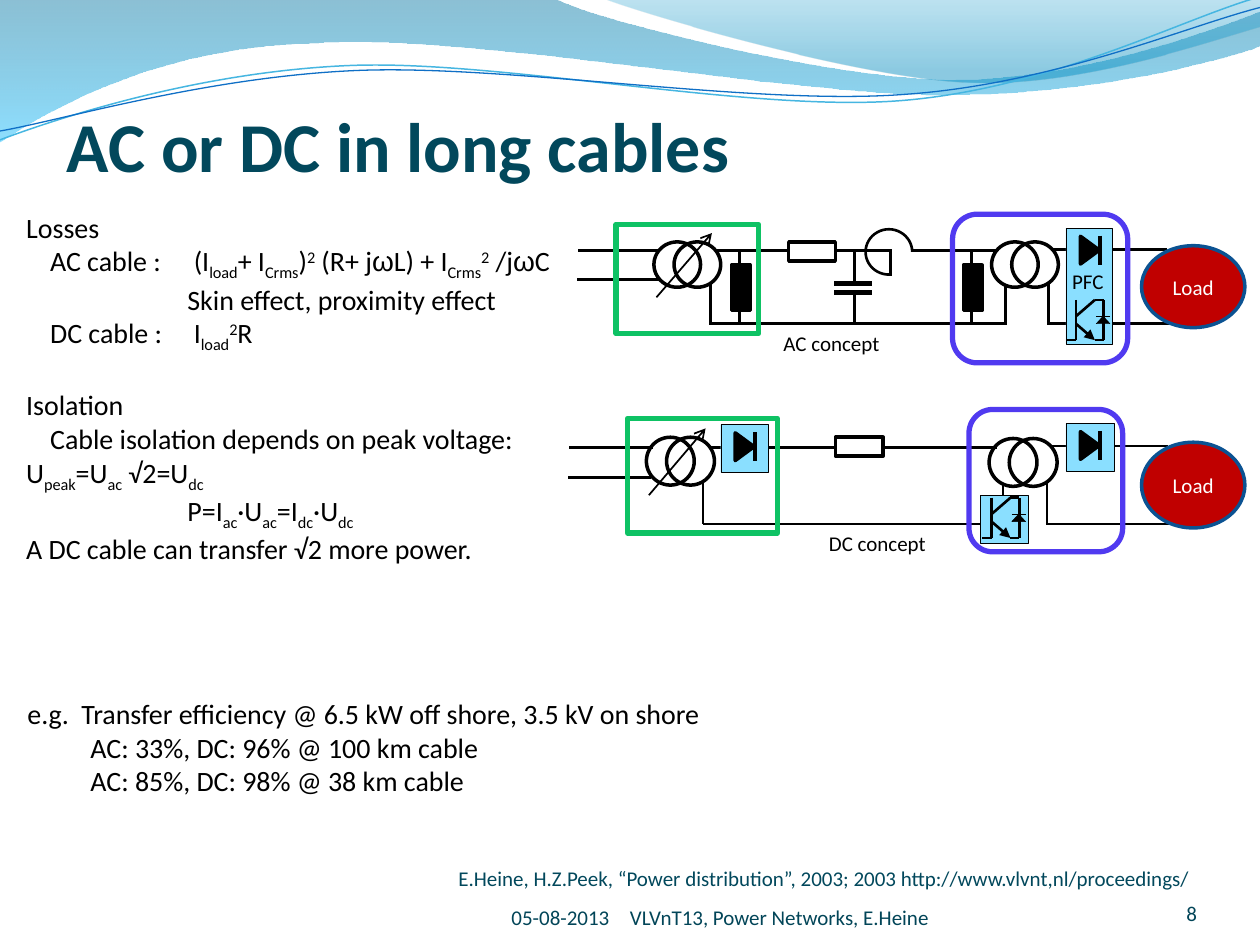
"""Build the slide comparing AC and DC power transfer in long cables."""
import math
from dataclasses import dataclass

from lxml import etree
from pptx import Presentation
from pptx import util as u
from pptx.dml.color import RGBColor
from pptx.enum import shapes, text
from pptx.oxml.ns import qn


@dataclass(frozen=True)
class Theme:
    font: str = "Calibri"
    greek: str = "Arial"
    ink: str = "000000"
    title: str = "02485C"
    footer: str = "024558"
    white: str = "FFFFFF"
    converter: str = "8ADFFF"
    shore: str = "0EC264"
    sea: str = "503AF0"
    load: str = "C00000"
    load_edge: str = "0B5292"
    title_size: int = 40
    body_size: int = 16
    small_size: int = 12


THEME = Theme()
KIND = shapes.MSO_SHAPE
BASELINES = {"_": -25000, "^": 30000}

LOSSES = [
    "Losses",
    "\tAC cable :\t (I|_load|+ I|_Crms|)|^2| (R+ j|ω|L) + I|_Crms|^2| /j|ω|C",
    "\t\tSkin effect, proximity effect",
    "\tDC cable :\t I|_load|^2|R",
]
ISOLATION = [
    "Isolation",
    "\tCable isolation depends on peak voltage: \t\t\tU|_peak|=U|_ac| √2=U|_dc",
    "\t\tP=I|_ac|·U|_ac|=I|_dc|·U|_dc",
    "A DC cable can transfer √2 more power.",
]
EFFICIENCY = [
    "e.g.  Transfer efficiency @ 6.5 kW off shore, 3.5 kV on shore",
    "AC: 33%, DC: 96% @ 100 km cable",
    "AC: 85%, DC: 98% @ 38 km cable",
]
CITATION = "E.Heine, H.Z.Peek, “Power distribution”, 2003; 2003 http://www.vlvnt,nl/proceedings/"
FOOTERS = [
    ((4.06, 6.98, 2.33, 0.4), "05-08-2013", "LEFT"),
    ((5, 6.98, 3.46, 0.4), "VLVnT13, Power Networks, E.Heine", "LEFT"),
    ((8.67, 6.95, 0.83, 0.4), "8", "RIGHT"),
]

BANDS = [
    ([(0, 0), (4.4, -0.01), (4.76, 0.17, 6.64, 0.63, 7.58, 0.63), (8.53, 0.63, 9.58, 0.26, 10, 0.09),
      (10.01, 0.36), (9.83, 0.44, 8.7, 0.76, 7.46, 0.75), (6.22, 0.75, 3.82, 0.28, 2.57, 0.34),
      (1.29, 0.36, 0.46, 0.83, -0.01, 1.13), (0, 0)],
     [(0, "0074A1", 45), (1, "30C5FF", 55)]),
    ([(4.79, -0.01), (5.09, 0.11, 6.82, 0.62, 7.69, 0.65), (8.56, 0.69, 9.61, 0.32, 10, 0.21),
      (10, 0), (4.79, -0.01)],
     [(0, "27A1D0", 30), (0.8, "008BBF", 45)]),
]
RIPPLE_TILT = -2.7
RIPPLES = [
    ([(0, 1.11), (0.48, 0.93, 1.58, 0.57, 2.77, 0.52), (3.95, 0.47, 5.93, 0.89, 7.13, 0.8),
      (8.33, 0.71, 9.38, 0.15, 9.98, -0.02)], (4.99, 0.58), "46B6E1", 0.85),
    ([(0, 1.04), (0.47, 0.96, 1.64, 0.61, 2.83, 0.56), (4.03, 0.51, 5.97, 0.84, 7.17, 0.75),
      (8.36, 0.67, 9.41, 0.21, 10, 0.06)], (5, 0.59), "0F6FC6", 0.75),
]

CIRCUITS = [
    dict(
        wires=[(7.98, 2.27, 7.98, 2.58), (8.32, 2.25, 8.32, 2.58), (7.91, 1.99, 7.24, 1.99),
               (8.31, 2.57, 9.28, 2.57), (5.64, 2.57, 7.97, 2.57), (5.68, 1.99, 7.08, 1.99),
               (6.78, 1.99, 6.78, 2.57), (5.64, 2.25, 5.64, 2.58), (5.24, 1.99, 4.59, 1.99),
               (5.23, 2.22, 4.58, 2.22), (7.07, 1.99, 7.07, 2.19), (9.26, 1.98, 8.34, 1.98),
               (7.71, 1.99, 7.71, 2.57), (5.87, 1.99, 5.87, 2.57)],
        transformers=[(5.19, 1.92), (7.87, 1.92)], coil=(0.37, 0.36), tap=(5.21, 2.36, 5.65, 1.85),
        shore=(4.89, 1.78, 1.13, 0.87), sea=(7.56, 1.7, 1.39, 1.18), load=(9.06, 1.95, 0.82, 0.65),
        resistor=(6.26, 1.92, 0.37, 0.15), shunts=[(5.7, 2.21), (7.54, 2.21)],
        capacitors=[(6.62, 2.25)], inductors=[(6.87, 1.82, 0.37, 0.36)],
        converters=[(8.46, 1.81, 0.37, 0.92)], diodes=[(8.46, 1.81)], transistor=(8.45, 2.36),
        labels=[((6.12, 2.57, 1, 0.31), "AC concept"), ((8.41, 2.08, 0.45, 0.3), "PFC")]),
    dict(
        wires=[(7.96, 3.84, 7.96, 4.18), (8.31, 3.82, 8.31, 4.16), (9.27, 3.54, 8.33, 3.54),
               (8.3, 4.16, 9.29, 4.16), (5.58, 4.16, 7.78, 4.16), (5.63, 3.55, 7.91, 3.55),
               (5.58, 3.82, 5.58, 4.16), (5.18, 3.55, 4.52, 3.55), (5.17, 3.79, 4.51, 3.79)],
        transformers=[(5.13, 3.47), (7.85, 3.48)], coil=(0.38, 0.38), tap=(5.15, 3.93, 5.6, 3.4),
        shore=(4.98, 3.32, 1.19, 0.91), sea=(7.69, 3.25, 1.22, 1.13), load=(9.06, 3.51, 0.82, 0.68),
        resistor=(6.63, 3.47, 0.38, 0.15), shunts=[], capacitors=[], inductors=[],
        converters=[(x, y, 0.38, 0.38) for x, y in [(7.78, 3.93), (8.46, 3.36), (5.72, 3.37)]],
        diodes=[(8.46, 3.36), (5.72, 3.37)], transistor=(7.78, 3.93),
        labels=[((6.48, 4.16, 0.98, 0.3), "DC concept")]),
]
TRANSISTOR_WIRES = [(0.09, 0.02, 0.09, 0.34), (0.09, 0.34, 0.01, 0.34), (0.09, 0.15, 0.24, 0.02),
                    (0.24, 0.02, 0.31, 0.02), (0.24, 0.34, 0.31, 0.34), (0.31, 0.02, 0.31, 0.34)]


def inches(values):
    return [u.Inches(value) for value in values]


def paint(shape, fill=None, line=None, weight=2):
    shape.shadow.inherit = False
    for target, color in ((shape.fill, fill), (shape.line.fill, line)):
        if color:
            target.solid()
            target.fore_color.rgb = RGBColor.from_string(color)
        else:
            target.background()
    if line:
        shape.line.width = u.Pt(weight)
    return shape


def add_part(page, kind, place, fill=None, line=THEME.ink, weight=2, turn=0):
    shape = paint(page.shapes.add_shape(kind, *inches(place)), fill, line, weight)
    shape.rotation = turn
    return shape


def add_wire(page, ends, weight=1.5, head=None):
    wire = page.shapes.add_connector(shapes.MSO_CONNECTOR.STRAIGHT, *inches(ends))
    wire.line.color.rgb = RGBColor.from_string(THEME.ink)
    wire.line.width = u.Pt(weight)
    if head:
        etree.SubElement(wire.line._get_or_add_ln(), qn("a:tailEnd"), type=head)
    etree.SubElement(wire.element.spPr, qn("a:effectLst"))


def add_spans(para, line, size, color, bold=False):
    for piece in line.split("|"):
        span = para.add_run()
        span.text = piece.lstrip("_^")
        span.font.size = u.Pt(size)
        span.font.bold = bold
        span.font.name = THEME.greek if piece == "ω" else THEME.font
        span.font.color.rgb = RGBColor.from_string(color)
        if piece[0] in BASELINES:
            span.font._element.set("baseline", str(BASELINES[piece[0]]))


def add_text(page, place, lines, size, color=THEME.ink, wrap=False, bold=False, insets=None, align="LEFT"):
    box = page.shapes.add_textbox(*inches(place))
    frame = box.text_frame
    frame.word_wrap = wrap
    if insets:
        frame.margin_left, frame.margin_top, frame.margin_right, frame.margin_bottom = inches(insets)
        frame.vertical_anchor = text.MSO_ANCHOR.BOTTOM
    for index, line in enumerate(lines):
        para = frame.paragraphs[0] if index == 0 else frame.add_paragraph()
        para.alignment = text.PP_ALIGN[align]
        add_spans(para, line, size, color, bold)
    return frame.paragraphs


def add_curve(page, steps, center=(0, 0), tilt=0):
    cos, sin = math.cos(math.radians(tilt)), math.sin(math.radians(tilt))
    points = []
    for step in steps:
        for x, y in zip(step[::2], step[1::2]):
            dx, dy = x - center[0], y - center[1]
            points.append((center[0] + dx * cos + dy * sin, center[1] - dx * sin + dy * cos))
    builder = page.shapes.build_freeform(*inches(points[0]))
    builder.add_line_segments([inches(point) for point in points[1:]], close=steps[0] == steps[-1])
    shape = builder.convert_to_shape()
    shape.rotation = tilt
    segments = iter(list(shape.element.spPr.iter(qn("a:lnTo"))))
    for step in steps[1:]:
        segment = next(segments)
        if len(step) == 6:
            segment.tag = qn("a:cubicBezTo")
            for _ in range(2):
                extra = next(segments)
                segment.append(extra[0])
                extra.getparent().remove(extra)
    return shape


def add_waves(page):
    for steps, stops in BANDS:
        band = paint(add_curve(page, steps))
        band.fill.gradient()
        band.fill.gradient_angle = 270
        for stop, (position, color, _) in zip(band.fill.gradient_stops, stops):
            stop.position = position
            stop.color.rgb = RGBColor.from_string(color)
        for tint, (_, _, opacity) in zip(list(band.element.spPr.iter(qn("a:srgbClr"))), stops):
            etree.SubElement(tint, qn("a:alpha"), val=str(opacity * 1000))
    for steps, center, color, weight in RIPPLES:
        paint(add_curve(page, steps, center, RIPPLE_TILT), line=color, weight=weight)


def add_diode(page, x, y):
    add_part(page, KIND.ISOSCELES_TRIANGLE, (x + 0.08, y + 0.1, 0.22, 0.15), THEME.ink, turn=90)
    add_wire(page, (x + 0.27, y + 0.06, x + 0.27, y + 0.29), 2.25)


def add_transistor(page, x, y):
    for x1, y1, x2, y2 in TRANSISTOR_WIRES:
        add_wire(page, (x + x1, y + y1, x + x2, y + y2))
    add_wire(page, (x + 0.09, y + 0.21, x + 0.24, y + 0.34), head="triangle")
    add_part(page, KIND.ISOSCELES_TRIANGLE, (x + 0.25, y + 0.15, 0.11, 0.06), THEME.ink, weight=0.25)
    add_wire(page, (x + 0.25, y + 0.15, x + 0.36, y + 0.15), 0.25)


def add_circuit(page, circuit):
    for ends in circuit["wires"]:
        add_wire(page, ends)
    for x, y in circuit["transformers"]:
        for left in (x, x + 0.16):
            add_part(page, KIND.OVAL, (left, y, *circuit["coil"]))
    for place in circuit["inductors"]:
        arc = add_part(page, KIND.ARC, place, weight=1.5)
        arc.adjustments[0], arc.adjustments[1] = 52.62, 0
    for x, y in circuit["capacitors"]:
        add_part(page, KIND.RECTANGLE, (x, y, 0.3, 0.07), THEME.white, None)
        for level in (y, y + 0.07):
            add_wire(page, (x, level, x + 0.3, level), 3)
    add_part(page, KIND.RECTANGLE, circuit["resistor"], THEME.white)
    for x, y in circuit["shunts"]:
        add_part(page, KIND.RECTANGLE, (x, y, 0.36, 0.15), THEME.ink, turn=90)
    add_part(page, KIND.RECTANGLE, circuit["shore"], line=THEME.shore, weight=3)
    add_part(page, KIND.ROUNDED_RECTANGLE, circuit["sea"], line=THEME.sea, weight=3)
    load = add_part(page, KIND.OVAL, circuit["load"], THEME.load, THEME.load_edge)
    para = load.text_frame.paragraphs[0]
    para.alignment = text.PP_ALIGN.CENTER
    add_spans(para, "Load", THEME.small_size, THEME.white)
    add_wire(page, circuit["tap"], 1, "arrow")
    for place in circuit["converters"]:
        add_part(page, KIND.RECTANGLE, place, THEME.converter, weight=0.25)
    for corner in circuit["diodes"]:
        add_diode(page, *corner)
    add_transistor(page, *circuit["transistor"])
    for place, label in circuit["labels"]:
        add_text(page, place, [label], THEME.small_size)


def main():
    deck = Presentation()
    deck.slide_width, deck.slide_height = inches((10, 7.5))
    page = deck.slides.add_slide(deck.slide_layouts[6])
    add_waves(page)
    add_text(page, (0.53, 0.7, 9, 0.78), ["AC or DC in long cables"], THEME.title_size, THEME.title,
             True, True, (0, 0.05, 0, 0))
    for place, line, align in FOOTERS:
        add_text(page, place, [line], THEME.small_size, THEME.footer, True, insets=(0, 0, 0, 0), align=align)
    for circuit in CIRCUITS:
        add_circuit(page, circuit)
    paras = add_text(page, (0.11, 1.62, 4.97, 2.79), LOSSES + ISOLATION, THEME.body_size, wrap=True)
    for para in paras:
        tabs = etree.SubElement(para._p.get_or_add_pPr(), qn("a:tabLst"))
        for stop in (0.19, 1.28):
            etree.SubElement(tabs, qn("a:tab"), pos=str(u.Inches(stop)), algn="l")
    paras[len(LOSSES)].space_before = u.Pt(19.5)
    for para in add_text(page, (0.12, 5.48, 5.56, 0.91), EFFICIENCY, THEME.body_size)[1:]:
        para.level = 1
        para._p.get_or_add_pPr().set("marL", str(u.Inches(0.5)))
    add_text(page, (3.54, 6.82, 6.46, 0.3), [CITATION], THEME.small_size, THEME.title, True)
    deck.save("out.pptx")


if __name__ == "__main__":
    main()
